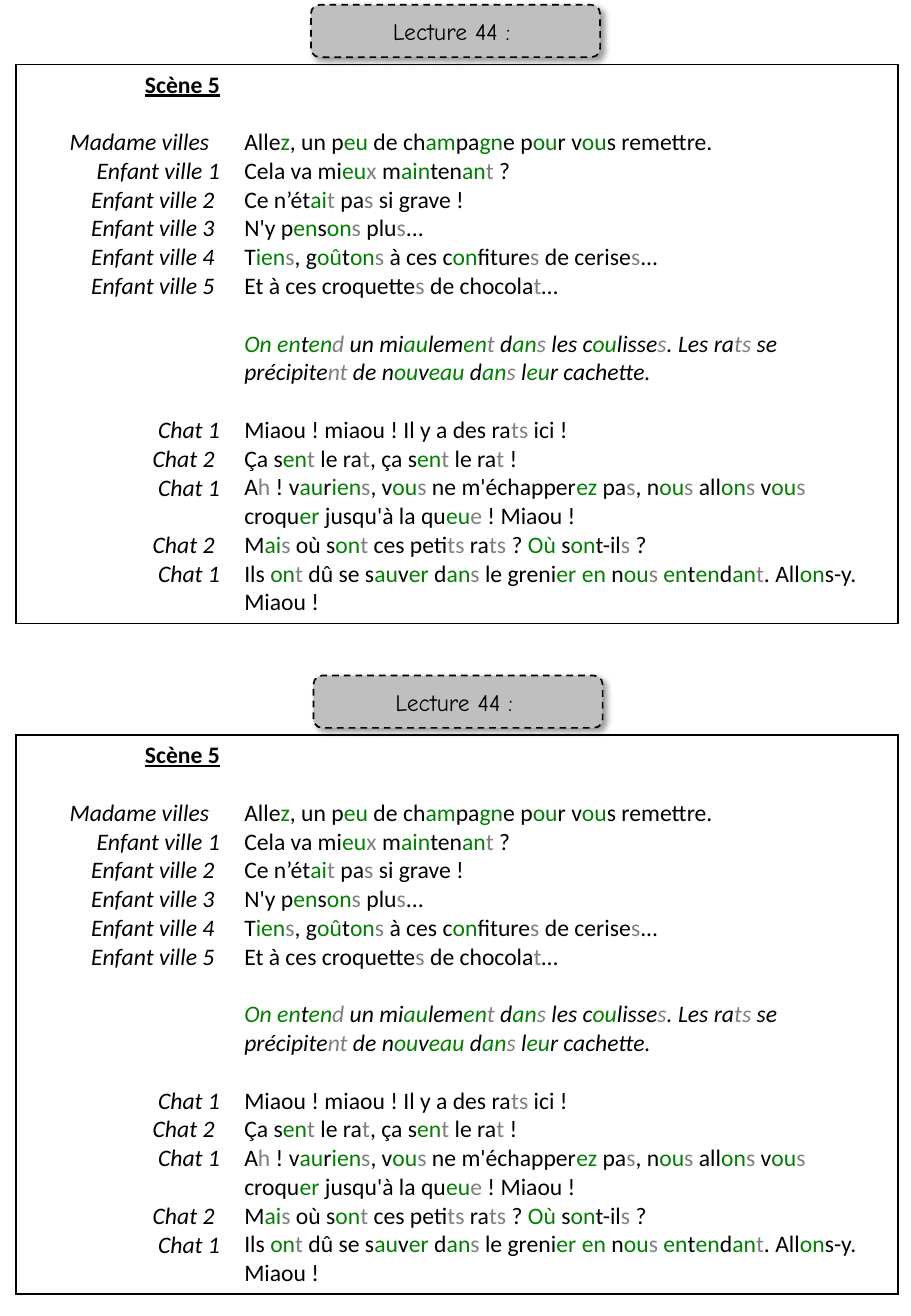
from lxml.etree import SubElement
from pptx import Presentation
from pptx.dml.color import RGBColor
from pptx.enum.dml import MSO_LINE
from pptx.enum.shapes import MSO_SHAPE
from pptx.enum.text import MSO_ANCHOR, PP_ALIGN
from pptx.oxml import parse_xml
from pptx.oxml.ns import nsdecls, qn
from pptx.util import Pt

BLACK = RGBColor(0x00, 0x00, 0x00)
GREEN = RGBColor(0x00, 0x80, 0x00)
GREY = RGBColor(0x7F, 0x7F, 0x7F)
SILVER = RGBColor(0xBF, 0xBF, 0xBF)
MARK_COLOURS = {"k": BLACK, "g": GREEN, "m": GREY}

TEXT_SIZE = Pt(14)
LINE_HEIGHT = 17.09
CELL_INSET = 3.6
COPY_STEP = 397.4

SCENE = "Scène 5"
SPEAKERS = [
    (0, SCENE),
    (1, "Madame villes  "),
    (0, "Enfant ville 1"),
    (0, "Enfant ville 2 "),
    (0, "Enfant ville 3 "),
    (0, "Enfant ville 4 "),
    (0, "Enfant ville 5 "),
    (4, "Chat 1"),
    (0, "Chat 2 "),
    (0, "Chat 1"),
    (1, "Chat 2 "),
    (0, "Chat 1"),
]

STAGE_DIRECTION = (
    "[On en]t[en]{d} un mi[au]lem[en]{t} d[an]{s} les c[ou]lisse{s}. Les ra{ts} se "
    "précipite{nt} de n[ou]v[eau] d[an]{s} l[eu]r cachette."
)
# [..] is a sound to read in green, {..} a silent letter in grey
LINES = [
    (0, "Alle[z], un p[eu] de ch[am]pa[gn]e p[ou]r v[ou]s remettre."),
    (0, "Cela va mi[eu]{x} m[ain]ten[an]{t} ?"),
    (0, "Ce n’ét[ai]{t} pa{s} si grave !"),
    (0, "N'y p[en]s[on]{s} plu{s}..."),
    (0, "T[ien]{s}, g[oû]t[on]{s} à ces c[on]fiture{s} de cerise{s}..."),
    (0, "Et à ces croquette{s} de chocola{t}… "),
    (1, STAGE_DIRECTION),
    (1, "Miaou ! miaou ! Il y a des ra{ts} ici !"),
    (0, "Ça s[en]{t} le ra{t}, ça s[en]{t} le ra{t} !"),
    (0, "A{h} ! v[au]r[ien]{s}, v[ou]{s} ne m'échapper[ez] pa{s}, n[ou]{s} all[on]{s} "
        "v[ou]{s} croqu[er] jusqu'à la qu[eu]{e} ! Miaou !"),
    (0, "M[ai]{s} où s[on]{t} ces peti{ts} ra{ts} ? [Où] s[on]t-il{s} ?"),
    (0, "Ils [on]{t} dû se s[au]v[er] d[an]{s} le greni[er en] n[ou]{s }"
        "[en]t[en]d[an]{t}. All[on]s-y. Miaou !"),
]


def format_run(run, colour=BLACK, font_name="Calibri"):
    run.font.name = font_name
    run.font.size = TEXT_SIZE
    run.font.color.rgb = colour


def add_marked_runs(paragraph, marked_text):
    tagged = "k" + marked_text.replace("[", "|g").replace("{", "|m")
    tagged = tagged.replace("]", "|k").replace("}", "|k")
    for piece in tagged.split("|"):
        if piece[1:]:
            run = paragraph.add_run()
            run.text = piece[1:]
            format_run(run, MARK_COLOURS[piece[0]])


def fill_paragraphs(cell, lines):
    for index, (gap, marked_text) in enumerate(lines):
        frame = cell.text_frame
        paragraph = frame.add_paragraph() if index else frame.paragraphs[0]
        if gap:
            paragraph.space_before = Pt(gap * LINE_HEIGHT)
        add_marked_runs(paragraph, marked_text)


def set_borders(cell, sides):
    cell.fill.background()
    properties = cell._tc.get_or_add_tcPr()
    for position, side in enumerate("LRTB"):
        paint = '<a:solidFill><a:srgbClr val="000000"/></a:solidFill>'
        if side not in sides:
            paint = "<a:noFill/>"
        border = f'<a:ln{side} {nsdecls("a")} w="{Pt(1)}">{paint}</a:ln{side}>'
        properties.insert(position, parse_xml(border))


def add_shadow(shape):
    shape.shadow.inherit = False
    effects = shape._element.spPr.find(qn("a:effectLst"))
    shadow = SubElement(effects, qn("a:outerShdw"), blurRad=str(Pt(4)),
                        dist=str(Pt(3)), dir="2700000", algn="tl", rotWithShape="0")
    colour = SubElement(shadow, qn("a:srgbClr"), val="000000")
    SubElement(colour, qn("a:alpha"), val="40000")


def add_heading(slide, left, top):
    heading = slide.shapes.add_shape(
        MSO_SHAPE.ROUNDED_RECTANGLE, Pt(left), Pt(top), Pt(171.4), Pt(31))
    heading.fill.solid()
    heading.fill.fore_color.rgb = SILVER
    heading.line.color.rgb = BLACK
    heading.line.width = Pt(1)
    heading.line.dash_style = MSO_LINE.DASH
    add_shadow(heading)
    heading.text_frame.text = "Lecture 44 : "
    heading.text_frame.vertical_anchor = MSO_ANCHOR.MIDDLE
    paragraph = heading.text_frame.paragraphs[0]
    paragraph.alignment = PP_ALIGN.CENTER
    format_run(paragraph.runs[0], font_name="Comic Neue")


def add_dialogue(slide, top):
    dialogue = slide.shapes.add_table(
        1, 2, Pt(9.4), Pt(top), Pt(522.8), Pt(326)).table
    dialogue.first_row = False
    dialogue.horz_banding = False
    dialogue.columns[0].width = Pt(128.2)
    dialogue.columns[1].width = Pt(394.6)
    speakers, speeches = dialogue.cell(0, 0), dialogue.cell(0, 1)

    set_borders(speakers, "LTB")
    fill_paragraphs(speakers, SPEAKERS)
    for paragraph in speakers.text_frame.paragraphs:
        paragraph.alignment = PP_ALIGN.RIGHT
        is_scene = paragraph.text == SCENE
        for run in paragraph.runs:
            run.font.bold = is_scene
            run.font.underline = is_scene
            run.font.italic = not is_scene

    set_borders(speeches, "TRB")
    speeches.margin_top = Pt(CELL_INSET + 2 * LINE_HEIGHT)
    fill_paragraphs(speeches, LINES)
    for (_, marked_text), paragraph in zip(LINES, speeches.text_frame.paragraphs):
        for run in paragraph.runs:
            run.font.italic = marked_text == STAGE_DIRECTION


def main():
    presentation = Presentation()
    presentation.slide_width = Pt(540)
    presentation.slide_height = Pt(779.76)
    slide = presentation.slides.add_slide(presentation.slide_layouts[6])
    for index, heading_left in enumerate((184.3, 185.8)):
        offset = index * COPY_STEP
        add_heading(slide, heading_left, 2.9 + offset)
        add_dialogue(slide, 38.2 + offset)
    presentation.save("out.pptx")


if __name__ == "__main__":
    main()
